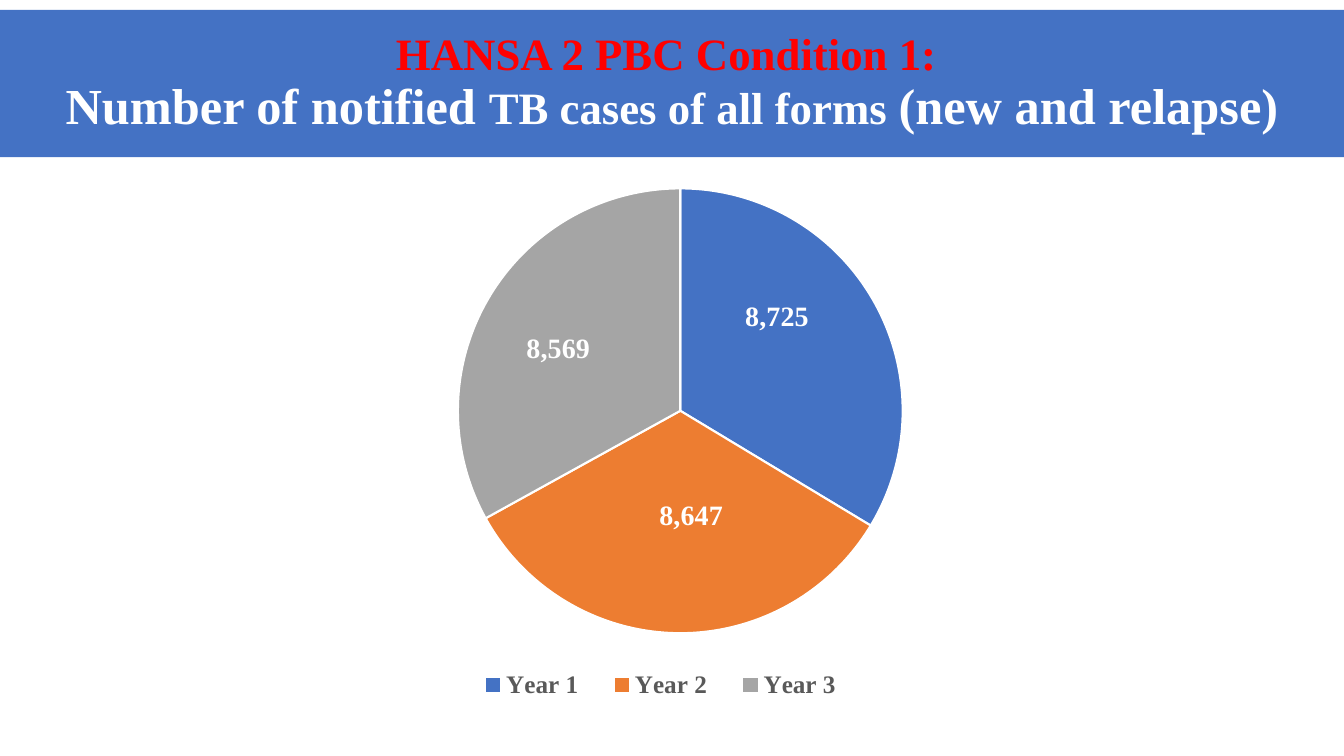
from dataclasses import dataclass

from lxml import etree
from pptx import Presentation
from pptx import util as u
from pptx.chart.data import CategoryChartData
from pptx.dml.color import RGBColor
from pptx.enum import chart as ch, text
from pptx.oxml.ns import qn

SERIF = "Times New Roman"
COUNT_FORMAT = '_(* #,##0_);_(* \\(#,##0\\);_(* "-"_);_(@_)'


@dataclass
class YearSlice:
    label: str
    cases: int
    color: str
    label_shift: dict[str, float]


@dataclass
class Phrase:
    wording: str
    size: int
    color: str
    ends_line: bool = False


YEARS = [
    YearSlice("Year 1", 8725, "4472C4", {"x": 0, "y": -0.07}),
    YearSlice("Year 2", 8647, "ED7D31", {"x": 0.01, "y": -0.01}),
    YearSlice("Year 3", 8569, "A5A5A5", {"x": -0.02, "y": -0.01}),
]
HEADING = [
    Phrase("HANSA 2 PBC Condition 1: ", 32, "FF0000", ends_line=True),
    Phrase("Number of notified ", 36, "FFFFFF"),
    Phrase("TB cases of all forms ", 32, "FFFFFF"),
    Phrase("(new and relapse)", 36, "FFFFFF"),
]


def rgb(color: str) -> RGBColor:
    return RGBColor.from_string(color)


def style_font(font, size: int, color: str) -> None:
    font.name = SERIF
    font.size = u.Pt(size)
    font.bold = True
    font.color.rgb = rgb(color)


def set_layout(parent, index: int, settings: dict) -> None:
    """Give a chart part a manual layout, in fractions of the chart."""
    for old in parent.findall(qn("c:layout")):
        parent.remove(old)
    layout = etree.Element(qn("c:layout"))
    manual = etree.SubElement(layout, qn("c:manualLayout"))
    for key, value in settings.items():
        etree.SubElement(manual, qn(f"c:{key}")).set("val", str(value))
    parent.insert(index, layout)


def add_heading(slide) -> None:
    heading = slide.shapes.title
    heading.left, heading.top = u.Cm(0), u.Cm(0.25)
    heading.width, heading.height = u.Cm(33.87), u.Cm(3.71)
    heading.fill.solid()
    heading.fill.fore_color.rgb = rgb("4472C4")
    frame = heading.text_frame
    frame.word_wrap = True
    frame.auto_size = text.MSO_AUTO_SIZE.NONE
    frame.vertical_anchor = text.MSO_ANCHOR.MIDDLE
    paragraph = frame.paragraphs[0]
    paragraph.alignment = text.PP_ALIGN.CENTER
    paragraph.line_spacing = 0.9
    for phrase in HEADING:
        run = paragraph.add_run()
        run.text = phrase.wording
        style_font(run.font, phrase.size, phrase.color)
        if phrase.ends_line:
            paragraph.add_line_break()


def add_cases_pie(slide) -> None:
    data = CategoryChartData(number_format="#,##0")
    data.categories = [year.label for year in YEARS]
    data.add_series("Series 1", [year.cases for year in YEARS])
    pie = slide.shapes.add_chart(
        ch.XL_CHART_TYPE.PIE, u.Cm(0.66), u.Cm(4.29), u.Cm(32.97), u.Cm(14.1), data
    ).chart
    pie.has_title = False
    pie.font.name = "Calibri"
    pie.font.size = u.Pt(10)
    plot = pie.plots[0]
    plot.vary_by_categories = True
    cases = plot.series[0]

    # Labels shared by the whole series
    labels = cases.data_labels
    labels.show_value = True
    labels.number_format = COUNT_FORMAT
    labels.number_format_is_linked = False
    labels.position = ch.XL_LABEL_POSITION.CENTER
    style_font(labels.font, 20, "FFFFFF")

    # Slices and their label offsets
    for index, year in enumerate(YEARS):
        point = cases.points[index]
        point.format.fill.solid()
        point.format.fill.fore_color.rgb = rgb(year.color)
        point.format.line.color.rgb = rgb("FFFFFF")
        point.format.line.width = u.Pt(1.5)
        style_font(point.data_label.font, 20, "FFFFFF")
        point.data_label.position = ch.XL_LABEL_POSITION.CENTER
    for year, label in zip(YEARS, cases._element.iter(qn("c:dLbl"))):
        set_layout(label, 1, year.label_shift)

    # Legend and plot placement
    pie.has_legend = True
    legend = pie.legend
    legend.position = ch.XL_LEGEND_POSITION.BOTTOM
    legend.include_in_layout = False
    style_font(legend.font, 18, "595959")
    edges = {"xMode": "edge", "yMode": "edge"}
    set_layout(legend._element, 1, edges | {"x": 0.33, "y": 0.88, "w": 0.31, "h": 0.08})
    plot_area = pie._chartSpace.find(f".//{qn('c:plotArea')}")
    set_layout(
        plot_area, 0,
        {"layoutTarget": "inner"} | edges | {"x": 0.33, "y": 0.03, "w": 0.34, "h": 0.8},
    )


def main() -> None:
    deck = Presentation()
    deck.slide_width, deck.slide_height = u.Cm(33.87), u.Cm(19.05)
    slide = deck.slides.add_slide(deck.slide_layouts[5])
    add_heading(slide)
    add_cases_pie(slide)
    deck.save("out.pptx")


if __name__ == "__main__":
    main()
